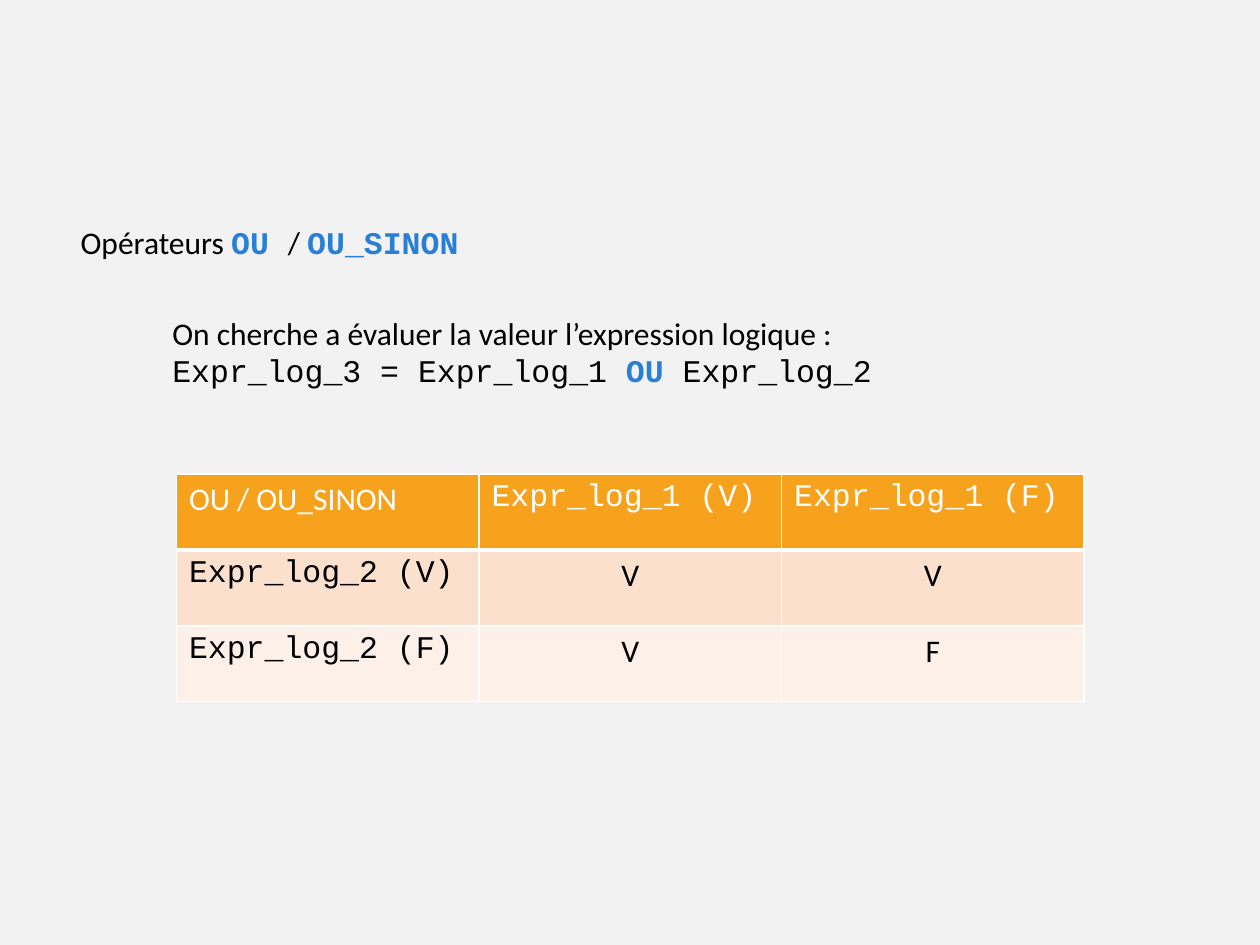
"""Build a slide on the OU / OU_SINON operators with their truth table."""

from typing import NamedTuple

import lxml.etree
import pptx
import pptx.dml.color
import pptx.enum.text
import pptx.oxml.ns
import pptx.util

Pt = pptx.util.Pt
RGBColor = pptx.dml.color.RGBColor
Align = pptx.enum.text.PP_ALIGN

BACKGROUND = RGBColor(0xF2, 0xF2, 0xF2)
BLACK = RGBColor(0, 0, 0)
WHITE = RGBColor(0xFF, 0xFF, 0xFF)
BLUE = RGBColor(0x29, 0x7F, 0xD5)
ORANGE = RGBColor(0xF6, 0xA2, 0x1D)
PEACH = RGBColor(0xFB, 0xE0, 0xCD)
CREAM = RGBColor(0xFD, 0xF0, 0xE8)
BODY = "Calibri"
CODE = "Courier New"
TEXT_SIZE = Pt(18)


class Span(NamedTuple):
    text: str
    font: str = BODY
    color: RGBColor = BLACK
    bold: bool = False


class Row(NamedTuple):
    spans: list[Span]
    fill: RGBColor
    bottom_border: float = 1


TITLE = [
    Span("Opérateurs "),
    Span("OU ", CODE, BLUE, True),
    Span("/ "),
    Span("OU_SINON", CODE, BLUE, True),
]
QUESTION = [
    [Span("On cherche a évaluer la valeur l’expression logique :")],
    [
        Span("Expr_log_3 = Expr_log_1 ", CODE),
        Span("OU ", CODE, BLUE, True),
        Span("Expr_log_2", CODE),
    ],
]
ROWS = [
    Row(
        [
            Span("OU / OU_SINON", BODY, WHITE),
            Span("Expr_log_1 (V)", CODE, WHITE),
            Span("Expr_log_1 (F)", CODE, WHITE),
        ],
        ORANGE,
        3,
    ),
    Row([Span("Expr_log_2 (V)", CODE), Span("V"), Span("V")], PEACH),
    Row([Span("Expr_log_2 (F)", CODE), Span("V"), Span("F")], CREAM),
]


def write_paragraph(para, spans: list[Span], alignment=Align.LEFT) -> None:
    """Fill a paragraph with formatted spans."""
    para.alignment = alignment
    para.font.size = TEXT_SIZE
    for span in spans:
        run = para.add_run()
        run.text = span.text
        run.font.size = TEXT_SIZE
        run.font.name = span.font
        run.font.bold = span.bold
        run.font.color.rgb = span.color


def write_box(box, paragraphs: list[list[Span]]) -> None:
    """Write paragraphs into a top-anchored, wrapping text shape."""
    frame = box.text_frame
    frame.word_wrap = True
    frame.vertical_anchor = pptx.enum.text.MSO_ANCHOR.TOP
    frame.auto_size = pptx.enum.text.MSO_AUTO_SIZE.SHAPE_TO_FIT_TEXT
    for index, spans in enumerate(paragraphs):
        para = frame.add_paragraph() if index else frame.paragraphs[0]
        write_paragraph(para, spans)


def add_border(cell, side: str, width: float) -> None:
    """Draw one white border of a table cell."""
    qualify = pptx.oxml.ns.qn
    properties = cell._tc.get_or_add_tcPr()
    line = lxml.etree.SubElement(properties, qualify(f"a:ln{side}"), w=str(Pt(width)))
    fill = lxml.etree.SubElement(line, qualify("a:solidFill"))
    lxml.etree.SubElement(fill, qualify("a:srgbClr"), val=str(WHITE))


def add_truth_table(page, rows: list[Row]) -> None:
    """Add the truth table with equal columns and rows."""
    count = len(rows[0].spans)
    frame = page.shapes.add_table(
        len(rows), count, Pt(100.8), Pt(270.9), Pt(518.8), Pt(130.1)
    )
    for row_index, row in enumerate(rows):
        for column, span in enumerate(row.spans):
            cell = frame.table.cell(row_index, column)
            for side in "LRT":
                add_border(cell, side, 1)
            add_border(cell, "B", row.bottom_border)
            cell.fill.solid()
            cell.fill.fore_color.rgb = row.fill
            centred = row_index and column
            write_paragraph(
                cell.text_frame.paragraphs[0],
                [span],
                Align.CENTER if centred else Align.LEFT,
            )


def main() -> None:
    """Assemble and save the deck."""
    deck = pptx.Presentation()
    deck.slide_width, deck.slide_height = Pt(720), Pt(540)
    page = deck.slides.add_slide(deck.slide_layouts.get_by_name("Title Only"))
    page.background.fill.solid()
    page.background.fill.fore_color.rgb = BACKGROUND

    title = page.shapes.title
    title.left, title.top = Pt(38.9), Pt(123.8)
    title.width, title.height = Pt(374.4), Pt(28.8)
    write_box(title, [TITLE])

    question = page.shapes.add_textbox(Pt(91.4), Pt(175.7), Pt(481), Pt(51.1))
    write_box(question, QUESTION)
    add_truth_table(page, ROWS)
    deck.save("out.pptx")


if __name__ == "__main__":
    main()
